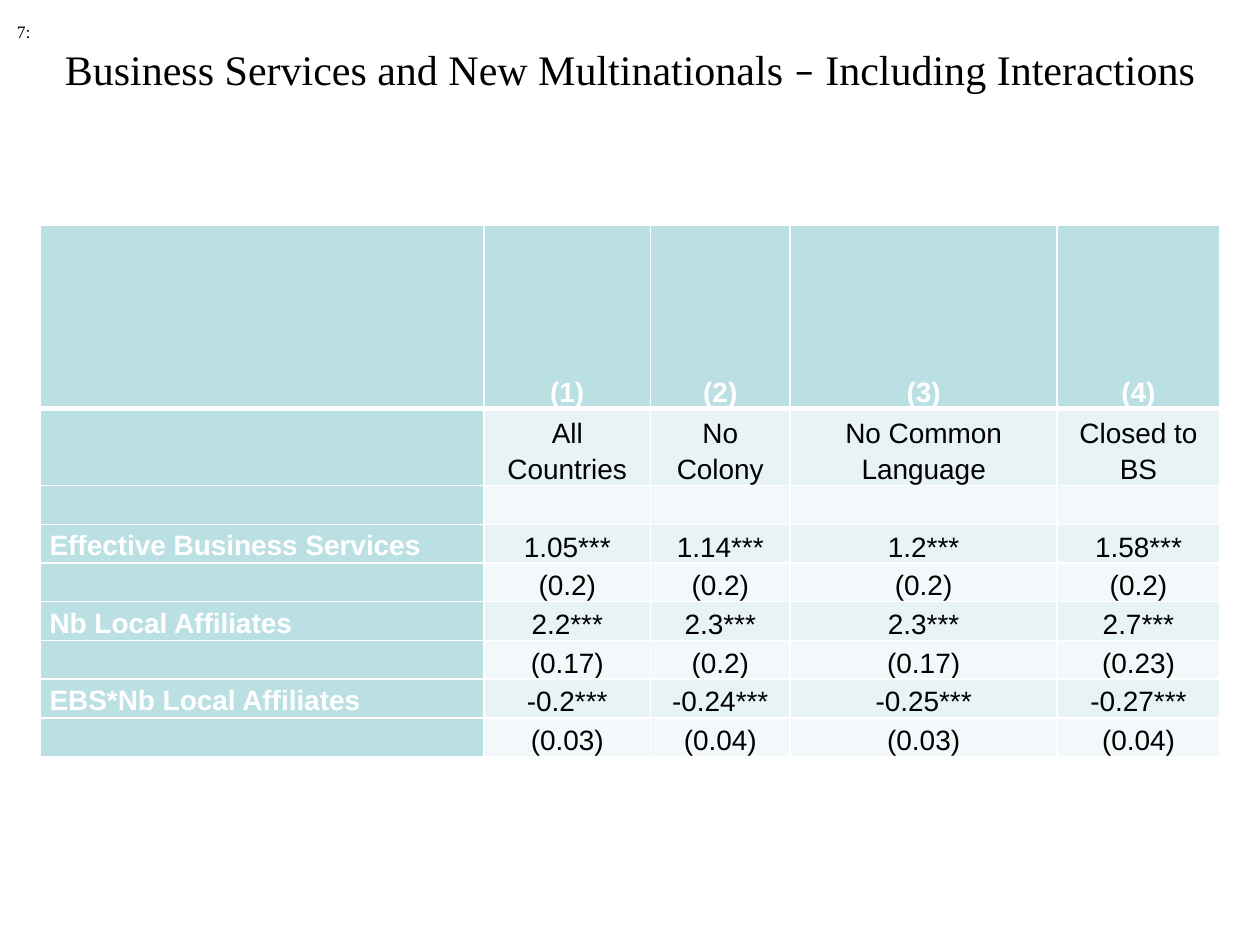
from dataclasses import dataclass

from lxml.etree import SubElement
from pptx import Presentation
from pptx.dml.color import RGBColor
from pptx.enum.text import MSO_ANCHOR, MSO_AUTO_SIZE, PP_ALIGN
from pptx.oxml.ns import qn
from pptx.slide import Slide
from pptx.table import Table, _Cell
from pptx.util import Cm, Pt

BLACK = RGBColor(0x00, 0x00, 0x00)
WHITE = RGBColor(0xFF, 0xFF, 0xFF)
TEAL = RGBColor(0xBB, 0xE0, 0xE3)
LIGHT_BAND = RGBColor(0xE7, 0xF3, 0xF4)
PALE_BAND = RGBColor(0xF3, 0xF9, 0xFA)

SERIF = "Times New Roman"
COLUMN_WIDTHS = (8.94, 3.35, 2.82, 5.38, 3.28)


@dataclass(frozen=True)
class ResultRow:
    label: str
    values: tuple[str, ...]
    height: float = 0.78


ROWS = (
    ResultRow("", ("(1)", "(2)", "(3)", "(4)"), 3.68),
    ResultRow("", ("All Countries", "No Colony", "No Common Language", "Closed to BS"), 1.56),
    ResultRow("", ("", "", "", "")),
    ResultRow("Effective Business Services", ("1.05***", "1.14***", "1.2***", "1.58***")),
    ResultRow("", ("(0.2)", "(0.2)", "(0.2)", "(0.2)")),
    ResultRow("Nb Local Affiliates", ("2.2***", "2.3***", "2.3***", "2.7***")),
    ResultRow("", ("(0.17)", "(0.2)", "(0.17)", "(0.23)")),
    ResultRow("EBS*Nb Local Affiliates", ("-0.2***", "-0.24***", "-0.25***", "-0.27***")),
    ResultRow("", ("(0.03)", "(0.04)", "(0.03)", "(0.04)")),
)


def add_title(slide: Slide) -> None:
    title = slide.shapes.title
    title.left, title.top, title.width, title.height = Cm(0), Cm(1.12), Cm(25.4), Cm(1.55)
    frame = title.text_frame
    frame.auto_size = MSO_AUTO_SIZE.NONE
    frame.vertical_anchor = MSO_ANCHOR.MIDDLE
    paragraph = frame.paragraphs[0]
    paragraph.alignment = PP_ALIGN.CENTER
    paragraph.font.size = Pt(24)
    paragraph.font.color.rgb = BLACK
    for text, font_name in (
        ("Business Services and New Multinationals ", SERIF),
        ("–", "Calibri"),
        (" Including Interactions", SERIF),
    ):
        run = paragraph.add_run()
        run.text = text
        run.font.name = font_name
        run.font.size = Pt(24)
    paragraph.add_line_break()


def add_slide_number(slide: Slide) -> None:
    box = slide.shapes.add_textbox(Cm(0), Cm(0.3), Cm(0.9), Cm(0.68))
    frame = box.text_frame
    frame.word_wrap = False
    frame.vertical_anchor = MSO_ANCHOR.MIDDLE
    frame.margin_left = Cm(0.34)
    paragraph = frame.paragraphs[0]
    paragraph.text = "7:"
    paragraph.font.size = Pt(10)
    paragraph.font.name = SERIF
    paragraph.font.color.rgb = BLACK


def set_borders(cell: _Cell, top: float, bottom: float) -> None:
    properties = cell._tc.get_or_add_tcPr()
    for tag, width in (("a:lnL", 1), ("a:lnR", 1), ("a:lnT", top), ("a:lnB", bottom)):
        line = SubElement(properties, qn(tag), w=str(Pt(width)))
        fill = SubElement(line, qn("a:solidFill"))
        SubElement(fill, qn("a:srgbClr"), val=str(WHITE))


def fill_cell(cell: _Cell, text: str, row_index: int, is_label: bool) -> None:
    is_header = row_index == 0
    emphasised = is_header or is_label
    set_borders(cell, 3 if row_index == 1 else 1, 3 if is_header else 1)
    cell.fill.solid()
    band = LIGHT_BAND if row_index % 2 else PALE_BAND
    cell.fill.fore_color.rgb = TEAL if emphasised else band
    cell.margin_left = cell.margin_right = Cm(0.18)
    cell.margin_top = cell.margin_bottom = Cm(0)
    cell.vertical_anchor = MSO_ANCHOR.MIDDLE if is_label else MSO_ANCHOR.BOTTOM
    if not text:
        return
    paragraph = cell.text_frame.paragraphs[0]
    paragraph.text = text
    paragraph.alignment = PP_ALIGN.LEFT if is_label else PP_ALIGN.CENTER
    paragraph.line_spacing = 1.15
    paragraph.font.size = Pt(16)
    paragraph.font.name = "Arial"
    paragraph.font.bold = emphasised
    paragraph.font.color.rgb = WHITE if emphasised else BLACK


def add_results_table(slide: Slide) -> Table:
    frame = slide.shapes.add_table(
        len(ROWS), len(COLUMN_WIDTHS), Cm(0.82), Cm(4.55),
        Cm(sum(COLUMN_WIDTHS)), Cm(sum(row.height for row in ROWS)),
    )
    table = frame.table
    table.first_row = table.horz_banding = False
    for column, width in zip(table.columns, COLUMN_WIDTHS):
        column.width = Cm(width)
    for row_index, row in enumerate(ROWS):
        table.rows[row_index].height = Cm(row.height)
        for column_index, text in enumerate((row.label, *row.values)):
            fill_cell(table.cell(row_index, column_index), text, row_index, column_index == 0)
    return table


def main() -> None:
    presentation = Presentation()
    presentation.slide_width, presentation.slide_height = Cm(25.4), Cm(19.05)
    slide = presentation.slides.add_slide(presentation.slide_layouts[5])
    add_title(slide)
    add_slide_number(slide)
    add_results_table(slide)
    presentation.save("out.pptx")


if __name__ == "__main__":
    main()
